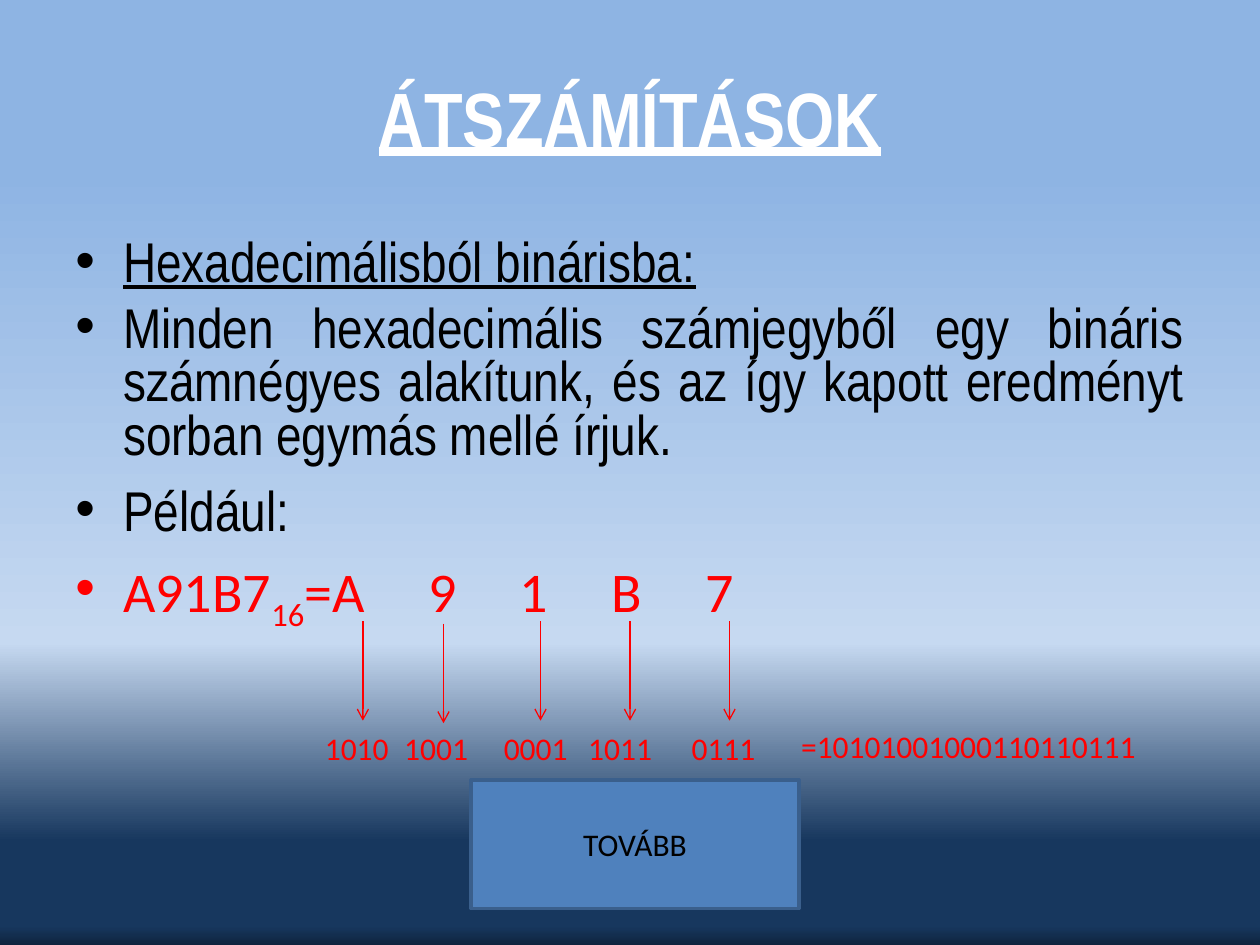
from lxml.etree import SubElement
from pptx import Presentation
from pptx.dml.color import RGBColor
from pptx.enum.shapes import MSO_CONNECTOR, MSO_SHAPE
from pptx.enum.text import MSO_ANCHOR, PP_ALIGN
from pptx.oxml import parse_xml
from pptx.oxml.ns import nsdecls, qn
from pptx.util import Inches, Pt

COLORS = {"white": "FFFFFF", "black": "000000", "red": "FF0000",
          "button": "4F81BD", "border": "3A5F8C"}
GRADIENT = [(18, "8EB4E3"), (68, "C6D9F1"), (89, "17375E"),
            (98, "17375E"), (100, "0F243E")]
NARROW, PLAIN = "Arial Narrow", "Calibri"

TITLE = "ÁTSZÁMÍTÁSOK"
HEADING = "Hexadecimálisból binárisba:"
RULES = ["Minden hexadecimális számjegyből egy bináris számnégyes alakítunk, "
         "és az így kapott eredményt sorban egymás mellé írjuk.",
         "Például:"]
HEX_NUMBER, BASE = "A91B7", "16"
DIGIT_GAP = 29
RESULT = "=10101001000110110111"
BUTTON = "TOVÁBB"
CONVERSIONS = [
    ("1010", 2.48, 2.88, 4.93),
    ("1001", 3.11, 3.52, 4.95),
    ("0001", 3.9, 4.29, 4.93),
    ("1011", 4.57, 5, 4.93),
    ("0111", 5.39, 5.79, 4.93),
]
ARROW_LENGTH = 0.79


def color(name):
    return RGBColor.from_string(COLORS[name])


def add_span(para, text, size, font, shade, bold=False, underline=False):
    span = para.add_run()
    span.text = text
    span.font.size = Pt(size)
    span.font.name = font
    span.font.bold = bold
    span.font.underline = underline
    span.font.color.rgb = color(shade)
    return span


def add_box(page, left, top, width, height):
    box = page.shapes.add_textbox(Inches(left), Inches(top), Inches(width), Inches(height))
    box.text_frame.word_wrap = True
    return box.text_frame


def add_label(page, text, left, top, width):
    frame = add_box(page, left, top, width, 0.4)
    add_span(frame.paragraphs[0], text, 18, PLAIN, "red")


def format_bullet(para, body=True):
    para.space_before = Pt(6.4)
    if body:
        para.alignment = PP_ALIGN.JUSTIFY
        para.line_spacing = 0.8
        para.space_after = Pt(6)
    properties = para._p.get_or_add_pPr()
    properties.set("marL", str(Inches(0.38)))
    properties.set("indent", str(Inches(-0.38)))
    SubElement(properties, qn("a:buFont")).set("typeface", "Arial")
    SubElement(properties, qn("a:buChar")).set("char", "•")


def add_arrow(page, x, top):
    arrow = page.shapes.add_connector(MSO_CONNECTOR.STRAIGHT, Inches(x), Inches(top),
                                      Inches(x), Inches(top + ARROW_LENGTH))
    arrow.line.color.rgb = color("red")
    arrow.line.width = Pt(0.75)
    SubElement(arrow.line._get_or_add_ln(), qn("a:tailEnd")).set("type", "arrow")
    SubElement(arrow._element.spPr, qn("a:effectLst"))


def paint_background(page):
    stops = "".join(f'<a:gs pos="{place * 1000}"><a:srgbClr val="{shade}"/></a:gs>'
                    for place, shade in GRADIENT)
    gradient = parse_xml(f'<a:gradFill {nsdecls("a")} rotWithShape="1"><a:gsLst>{stops}'
                         '</a:gsLst><a:lin ang="5400000" scaled="0"/></a:gradFill>')
    page.background.fill.solid()
    properties = page._element.cSld.find(qn("p:bg")).find(qn("p:bgPr"))
    properties.replace(properties[0], gradient)


def add_body(page):
    frame = add_box(page, 0.5, 1.75, 9, 4.95)
    heading = frame.paragraphs[0]
    format_bullet(heading, body=False)
    add_span(heading, HEADING, 32, NARROW, "black", underline=True)
    for text in RULES:
        para = frame.add_paragraph()
        format_bullet(para)
        add_span(para, text, 32, NARROW, "black")
    example = frame.add_paragraph()
    format_bullet(example)
    add_span(example, HEX_NUMBER, 32, PLAIN, "red")
    base = add_span(example, BASE, 32, PLAIN, "red")
    base.font._element.set("baseline", "-25000")
    add_span(example, "=" + HEX_NUMBER[0], 32, PLAIN, "red")
    for digit in HEX_NUMBER[1:]:
        gap = add_span(example, " ", 32, PLAIN, "red")
        gap.font._element.set("spc", str(DIGIT_GAP * 100))
        add_span(example, digit, 32, PLAIN, "red")


def add_button(page):
    button = page.shapes.add_shape(MSO_SHAPE.RECTANGLE, Inches(3.74), Inches(6.19),
                                   Inches(2.6), Inches(1.02))
    button.shadow.inherit = False
    button.fill.solid()
    button.fill.fore_color.rgb = color("button")
    button.line.color.rgb = color("border")
    button.line.width = Pt(2)
    button.text_frame.vertical_anchor = MSO_ANCHOR.MIDDLE
    para = button.text_frame.paragraphs[0]
    para.alignment = PP_ALIGN.CENTER
    add_span(para, BUTTON, 18, PLAIN, "black")


def main():
    deck = Presentation()
    deck.slide_width, deck.slide_height = Inches(10), Inches(7.5)
    page = deck.slides.add_slide(deck.slide_layouts[6])
    paint_background(page)

    title = add_box(page, 0.5, 0.3, 9, 1.25)
    title.vertical_anchor = MSO_ANCHOR.MIDDLE
    title.paragraphs[0].alignment = PP_ALIGN.CENTER
    add_span(title.paragraphs[0], TITLE, 44, NARROW, "white", bold=True, underline=True)

    add_body(page)
    for bits, left, x, top in CONVERSIONS:
        add_arrow(page, x, top)
        add_label(page, bits, left, 5.74, 0.79)
    add_label(page, RESULT, 6.26, 5.72, 3.5)
    add_button(page)
    deck.save("out.pptx")


if __name__ == "__main__":
    main()
